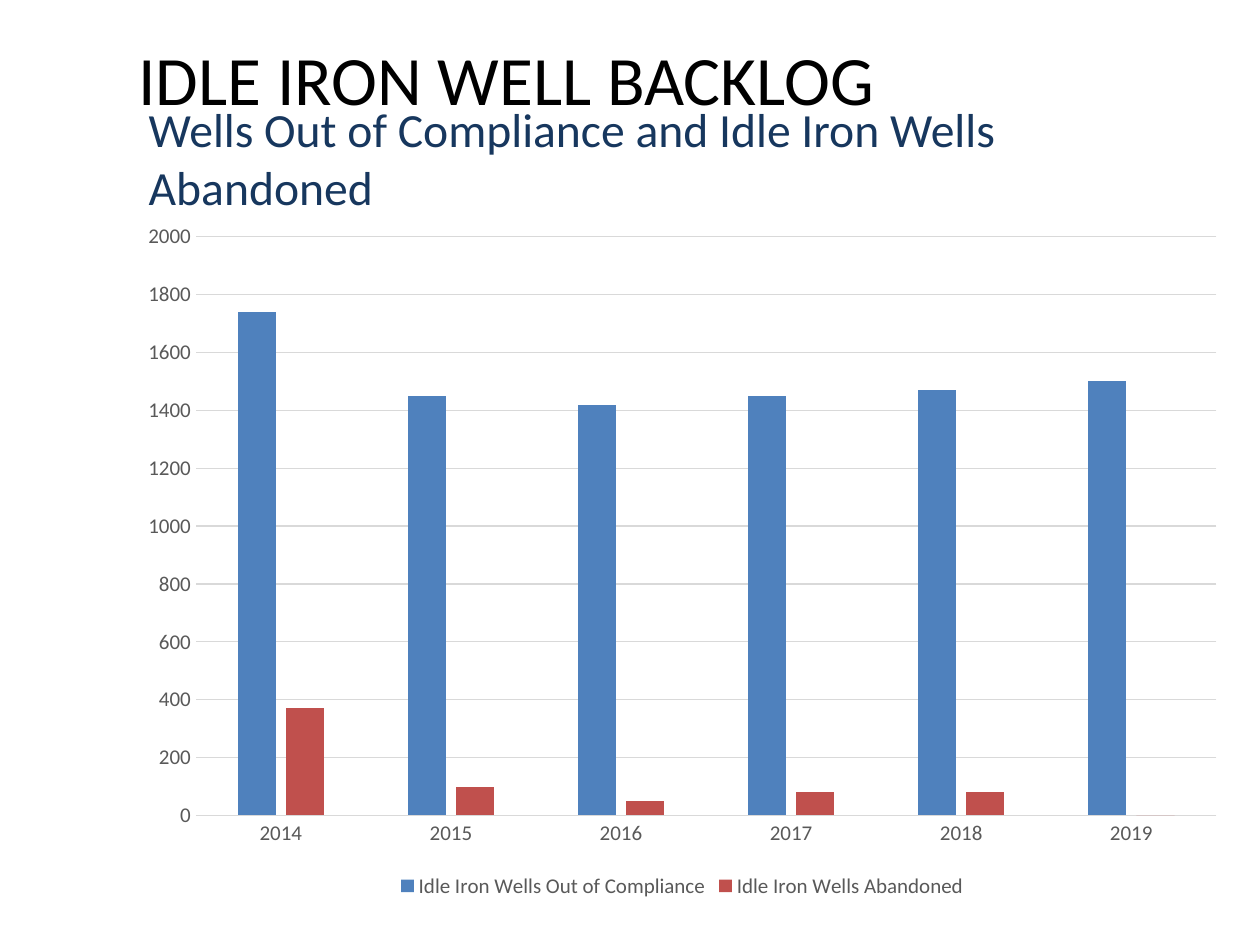
from pptx import Presentation
from pptx.chart.data import CategoryChartData
from pptx.dml.color import RGBColor
from pptx.enum.chart import XL_CHART_TYPE, XL_LEGEND_POSITION, XL_TICK_MARK
from pptx.enum.text import MSO_ANCHOR, MSO_AUTO_SIZE, PP_ALIGN
from pptx.oxml.ns import qn
from pptx.util import Inches, Pt

COLUMN = XL_CHART_TYPE.COLUMN_CLUSTERED
BOTTOM = XL_LEGEND_POSITION.BOTTOM
NO_TICK = XL_TICK_MARK.NONE
MIDDLE = MSO_ANCHOR.MIDDLE
NO_FIT = MSO_AUTO_SIZE.NONE
LEFT = PP_ALIGN.LEFT

BLACK = RGBColor(0x00, 0x00, 0x00)
NAVY = RGBColor(0x17, 0x37, 0x5E)
GRAY = RGBColor(0x59, 0x59, 0x59)
PALE = RGBColor(0xD9, 0xD9, 0xD9)
BLUE = RGBColor(0x4F, 0x81, 0xBD)
RED = RGBColor(0xC0, 0x50, 0x4D)

YEARS = ["2014", "2015", "2016", "2017", "2018", "2019"]
WELLS = [
    ("Idle Iron Wells Out of Compliance", (1740, 1450, 1420, 1450, 1470, 1500), BLUE),
    ("Idle Iron Wells Abandoned", (370, 100, 50, 80, 80, 0), RED),
]


class Deck:
    """Holds the text style and the current slide."""

    face = "Calibri"

    def __init__(self, slide):
        self.slide = slide

    def style(self, font, size, color):
        font.name = self.face
        font.size = Pt(size)
        font.color.rgb = color

    def text(self, index, box, words, size, color):
        holder = self.slide.placeholders[index]
        holder.left, holder.top, holder.width, holder.height = map(Inches, box)
        frame = holder.text_frame
        frame.text = words
        frame.word_wrap = True
        frame.auto_size = NO_FIT
        frame.vertical_anchor = MIDDLE
        para = frame.paragraphs[0]
        para.alignment = LEFT
        para.space_before = Pt(0)
        props = para._p.get_or_add_pPr()
        props.set("marL", "0")
        props.set("indent", "0")
        props.append(props.makeelement(qn("a:buNone"), {}))
        self.style(para.font, size, color)

    def rule(self, line):
        line.color.rgb = PALE
        line.width = Pt(0.75)

    def chart(self, box, names, series):
        data = CategoryChartData()
        data.categories = names
        for name, values, _ in series:
            data.add_series(name, values)
        chart = self.slide.shapes.add_chart(COLUMN, *map(Inches, box), data).chart
        self.style(chart.font, 10, BLACK)
        chart.has_title = False
        chart.has_legend = True
        chart.legend.position = BOTTOM
        chart.legend.include_in_layout = False
        self.style(chart.legend.font, 12, GRAY)

        plot = chart.plots[0]
        plot.gap_width = 219
        plot.overlap = -27
        plot.vary_by_categories = False
        for bars, (_, _, color) in zip(plot.series, series):
            bars.format.fill.solid()
            bars.format.fill.fore_color.rgb = color

        for axis in (chart.category_axis, chart.value_axis):
            axis.major_tick_mark = axis.minor_tick_mark = NO_TICK
            self.style(axis.tick_labels.font, 12, GRAY)
        self.rule(chart.category_axis.format.line)
        scale = chart.value_axis
        scale.minimum_scale, scale.maximum_scale, scale.major_unit = 0, 2000, 200
        scale.format.line.fill.background()
        self.rule(scale.major_gridlines.format.line)


def main():
    prs = Presentation()
    prs.slide_width, prs.slide_height = Inches(10), Inches(7.5)
    deck = Deck(prs.slides.add_slide(prs.slide_layouts[1]))
    deck.text(0, (1, 0.33, 8.83, 0.58), "IDLE IRON WELL BACKLOG", 39.6, BLACK)
    deck.text(1, (1.08, 1, 8.75, 0.5),
              "Wells Out of Compliance and Idle Iron Wells Abandoned", 27.2, NAVY)
    deck.chart((1, 1.67, 8.83, 5.5), YEARS, WELLS)
    prs.save("out.pptx")


if __name__ == "__main__":
    main()
